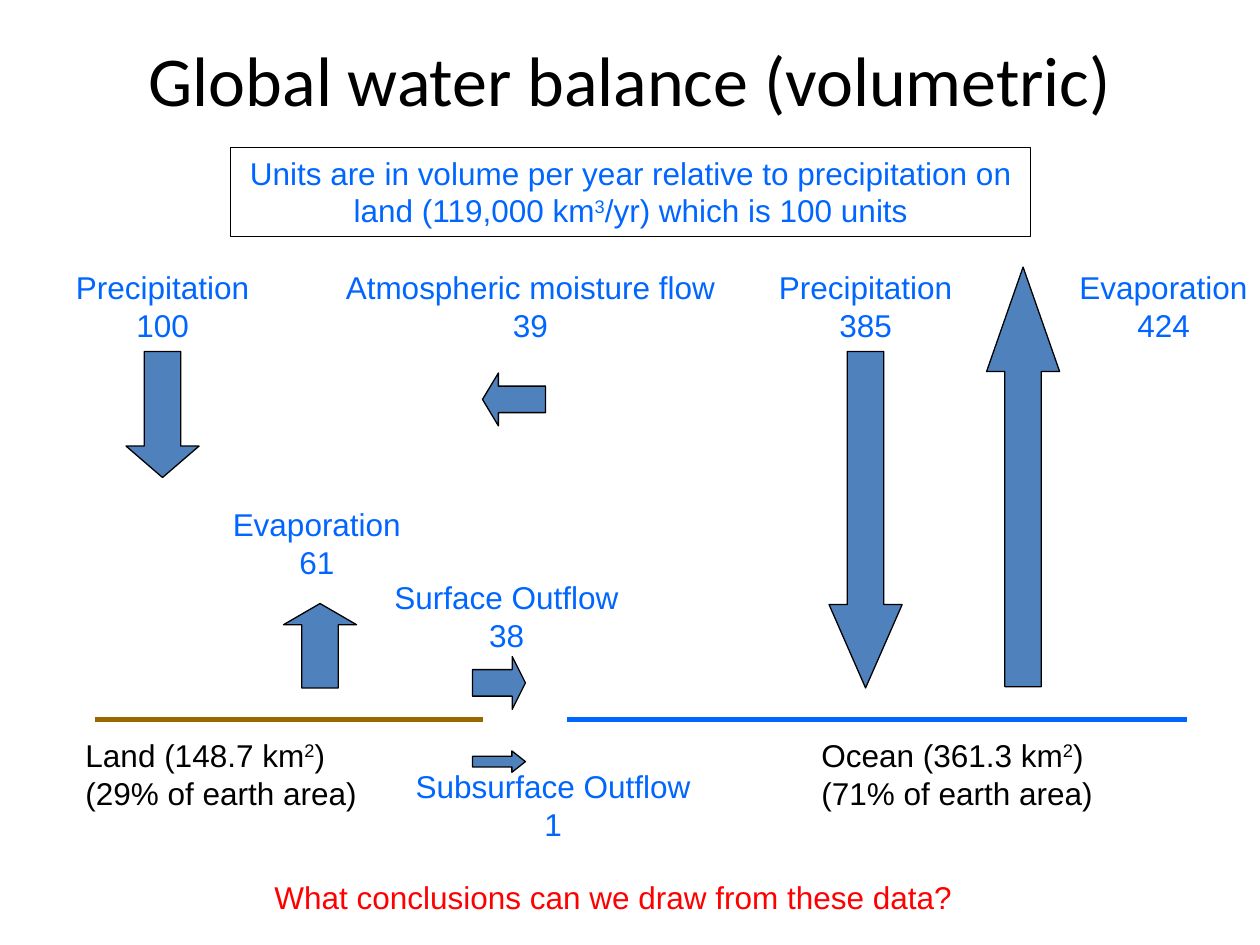
from pptx import Presentation
from pptx.dml.color import RGBColor
from pptx.enum.shapes import MSO_CONNECTOR, MSO_SHAPE
from pptx.enum.text import MSO_ANCHOR, MSO_AUTO_SIZE, PP_ALIGN
from pptx.oxml import parse_xml
from pptx.oxml.ns import nsdecls
from pptx.util import Inches, Pt

COLORS = {
    "text": "000000",
    "water": "0066FF",
    "land": "996600",
    "arrow": "4F81BD",
    "outline": "000000",
    "question": "FF0000",
}
LABEL_HEIGHT = 0.7

# Label text, left, top, width, wrapping
FLOW_LABELS = [
    ("Precipitation\n100", 0.5, 2.08, 1.58, False),
    ("Atmospheric moisture flow 39", 2.5, 2.08, 3.42, True),
    ("Precipitation\n385", 6.08, 2.08, 1.58, False),
    ("Evaporation\n424", 8.47, 2.08, 1.53, False),
    ("Evaporation\n61", 1.75, 3.96, 1.53, False),
    ("Surface Outflow\n38", 3.03, 4.54, 1.98, False),
    ("Subsurface Outflow\n1", 2.83, 6.04, 3.12, True),
]

# Arrow shape, left, top, width, height, head length relative to the short side
FLOW_ARROWS = [
    (MSO_SHAPE.DOWN_ARROW, 1, 2.79, 0.58, 1, 0.43),
    (MSO_SHAPE.LEFT_ARROW, 3.83, 2.96, 0.5, 0.42, 0.3),
    (MSO_SHAPE.DOWN_ARROW, 6.58, 2.79, 0.58, 2.67, 1.14),
    (MSO_SHAPE.UP_ARROW, 7.83, 2.12, 0.58, 3.33, 1.43),
    (MSO_SHAPE.UP_ARROW, 2.25, 4.79, 0.58, 0.67, 0.29),
    (MSO_SHAPE.RIGHT_ARROW, 3.75, 5.21, 0.42, 0.42, 0.25),
    (MSO_SHAPE.RIGHT_ARROW, 3.75, 5.96, 0.42, 0.17, 0.63),
]

# Caption, caption left, line start, line end, line colour
SURFACES = [
    ("Land (148.7 km^2^)\n(29% of earth area)", 0.58, 0.75, 3.83, "land"),
    ("Ocean (361.3 km^2^)\n(71% of earth area)", 6.42, 4.5, 9.42, "water"),
]


def rgb(name):
    return RGBColor.from_string(COLORS[name])


def add_text(slide, text, left, top, width, height, *, size=18, font="Arial",
             color="water", align=PP_ALIGN.CENTER, anchor=MSO_ANCHOR.TOP,
             wrap=True, outline=None):
    """Add a text box; text between two ^ marks is superscript."""
    box = slide.shapes.add_textbox(Inches(left), Inches(top),
                                   Inches(width), Inches(height))
    if outline:
        box.line.color.rgb = rgb(outline)
        box.line.width = Pt(0.75)
    frame = box.text_frame
    frame.word_wrap = wrap
    frame.auto_size = MSO_AUTO_SIZE.NONE
    frame.vertical_anchor = anchor
    for index, line in enumerate(text.split("\n")):
        paragraph = frame.add_paragraph() if index else frame.paragraphs[0]
        paragraph.alignment = align
        for part_index, part in enumerate(line.split("^")):
            run = paragraph.add_run()
            run.text = part
            run.font.size = Pt(size)
            run.font.name = font
            run.font.color.rgb = rgb(color)
            if part_index % 2:
                run.font._element.set("baseline", "30000")
    return box


def add_arrow(slide, kind, left, top, width, height, head):
    arrow = slide.shapes.add_shape(kind, Inches(left), Inches(top),
                                   Inches(width), Inches(height))
    arrow.adjustments[0] = 0.5
    arrow.adjustments[1] = head
    arrow.shadow.inherit = False
    arrow.fill.solid()
    arrow.fill.fore_color.rgb = rgb("arrow")
    arrow.line.color.rgb = rgb("outline")
    arrow.line.width = Pt(0.75)


def add_surface_line(slide, start, end, y, color):
    line = slide.shapes.add_connector(MSO_CONNECTOR.STRAIGHT, Inches(start),
                                      Inches(y), Inches(end), Inches(y))
    line.line.color.rgb = rgb(color)
    line.line.width = Pt(3)
    line._element.spPr.append(parse_xml(f"<a:effectLst {nsdecls('a')}/>"))


def main():
    presentation = Presentation()
    presentation.slide_width = Inches(10)
    presentation.slide_height = Inches(7.5)
    slide = presentation.slides.add_slide(presentation.slide_layouts[6])

    # Title and units
    add_text(slide, "Global water balance (volumetric)", 0.5, 0, 9, 1.25,
             size=40, font="Calibri", color="text", anchor=MSO_ANCHOR.MIDDLE)
    add_text(slide, "Units are in volume per year relative to precipitation on "
             "land (119,000 km^3^/yr) which is 100 units",
             1.83, 1.17, 6.35, 0.71, outline="outline")

    # Land and ocean surfaces
    for caption, left, start, end, color in SURFACES:
        add_surface_line(slide, start, end, 5.71, color)
        add_text(slide, caption, left, 5.79, 2.35, LABEL_HEIGHT,
                 color="text", align=PP_ALIGN.LEFT, wrap=False)

    # Water flows
    for arrow in FLOW_ARROWS:
        add_arrow(slide, *arrow)
    for text, left, top, width, wrap in FLOW_LABELS:
        add_text(slide, text, left, top, width, LABEL_HEIGHT, wrap=wrap)

    # Closing question
    add_text(slide, "What conclusions can we draw from these data?",
             2.08, 6.92, 5.58, 0.4, color="question", align=PP_ALIGN.LEFT,
             wrap=False)

    presentation.save("out.pptx")


if __name__ == "__main__":
    main()
